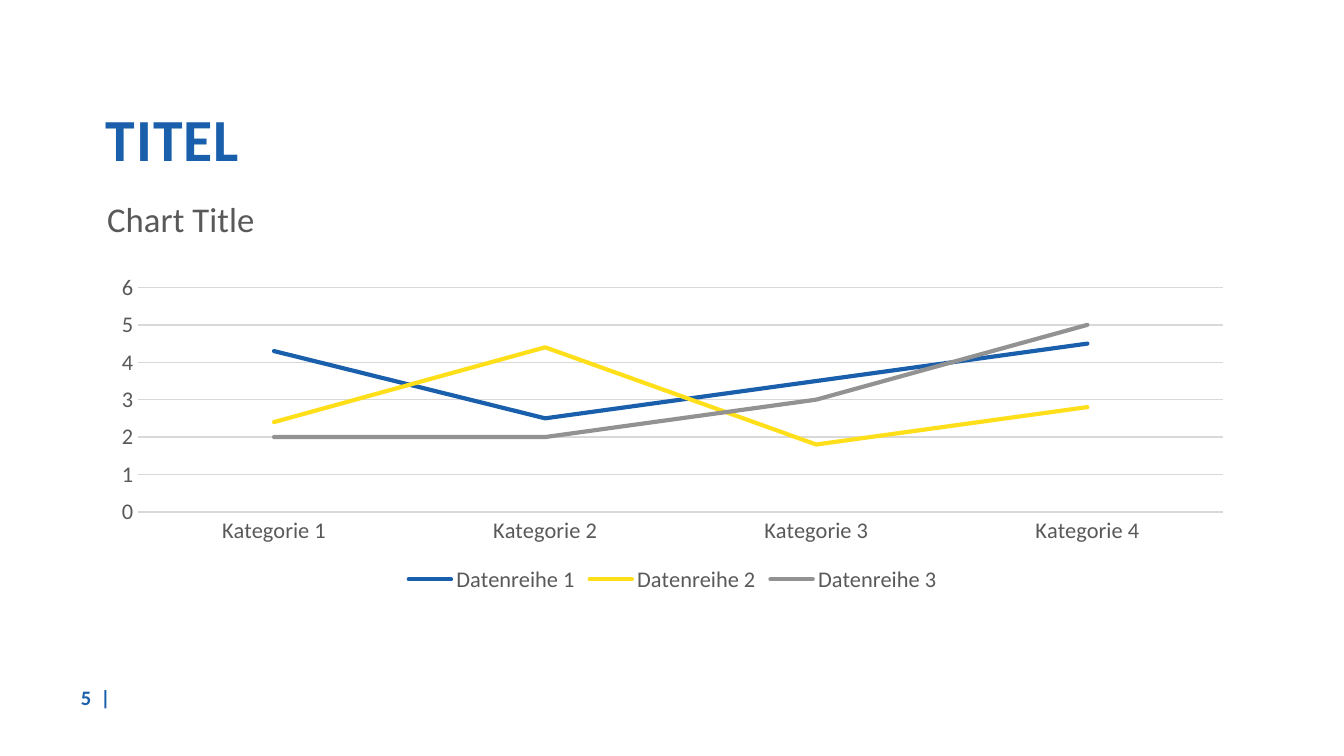
from lxml.etree import SubElement
from pptx import Presentation
from pptx.chart.data import CategoryChartData
from pptx.dml.color import RGBColor
from pptx.enum.chart import XL_CHART_TYPE, XL_LEGEND_POSITION, XL_MARKER_STYLE, XL_TICK_MARK
from pptx.enum.text import MSO_ANCHOR, PP_ALIGN
from pptx.oxml.ns import qn
from pptx.util import Inches, Pt

HUES = {"blue": "1A5FAB", "yellow": "FFDE1A", "gray": "929292", "text": "595959", "grid": "D9D9D9"}
CATS = [f"Kategorie {n}" for n in range(1, 5)]
ROWS = [("blue", (4.3, 2.5, 3.5, 4.5)), ("yellow", (2.4, 4.4, 1.8, 2.8)), ("gray", (2, 2, 3, 5))]


def style(item, values):
    """Set every attribute named in a dict of format values."""
    for name, value in values.items():
        setattr(item, name, value)


def tint(font, hue, size, bold=False):
    """Give a font its face, size, weight and colour."""
    style(font, {"name": "Calibri", "size": Pt(size), "bold": bold})
    font.color.rgb = RGBColor.from_string(HUES[hue])


def stroke(line, hue, width):
    """Give a line its colour and width."""
    line.color.rgb = RGBColor.from_string(HUES[hue])
    line.width = Pt(width)


def label(slide, box, text, size, frame, para):
    """Place a bold blue line of text in a box and return its run."""
    body = slide.shapes.add_textbox(*map(Inches, box)).text_frame
    style(body, {"word_wrap": True, **frame})
    line = body.paragraphs[0]
    style(line, para)
    run = line.add_run()
    run.text = text
    tint(run.font, "blue", size, True)
    return run


def layout(parent, index, modes, box, size):
    """Fix the place of a chart part, given in inches from the chart corner."""
    for old in parent.findall(qn("c:layout")):
        parent.remove(old)
    outer = parent.makeelement(qn("c:layout"), {})
    parent.insert(index, outer)
    manual = SubElement(outer, qn("c:manualLayout"))
    parts = {key: part / whole for key, part, whole in zip("xywh", box, size * 2)}
    for name, value in {**modes, **parts}.items():
        SubElement(manual, qn(f"c:{name}")).set("val", str(value))


def graph(slide, box):
    """Place the line chart with its title, axes and legend."""
    data = CategoryChartData()
    data.categories = CATS
    for n, (hue, values) in enumerate(ROWS, 1):
        data.add_series(f"Datenreihe {n}", values)
    chart = slide.shapes.add_chart(XL_CHART_TYPE.LINE, *map(Inches, box), data).chart
    tint(chart.font, "text", 12)
    chart.plots[0].vary_by_categories = False
    for series, (hue, values) in zip(chart.plots[0].series, ROWS):
        series.smooth = False
        series.marker.style = XL_MARKER_STYLE.NONE
        stroke(series.format.line, hue, 2.25)
    for line in chart.element.iter(qn("a:ln")):
        line.set("cap", "rnd")

    title = chart.chart_title
    title.text_frame.text = "Chart Title"
    tint(title.text_frame.paragraphs[0].runs[0].font, "text", 18.6)
    title.include_text_in_layout = False
    modes, size = {"xMode": "edge", "yMode": "edge"}, box[2:]
    layout(title.element, 1, modes, (0.01, 0.02), size)
    layout(chart.element.find(".//" + qn("c:plotArea")), 0,
           {"layoutTarget": "inner", **modes}, (0.29, 0.76, 8.07, 1.67), size)

    for axis in (chart.category_axis, chart.value_axis):
        style(axis, {"major_tick_mark": XL_TICK_MARK.NONE, "minor_tick_mark": XL_TICK_MARK.NONE})
        tint(axis.tick_labels.font, "text", 12)
    stroke(chart.category_axis.format.line, "grid", 0.75)
    style(chart.value_axis, {"minimum_scale": 0, "maximum_scale": 6, "major_unit": 1})
    chart.value_axis.format.line.fill.background()
    stroke(chart.value_axis.major_gridlines.format.line, "grid", 0.75)

    chart.has_legend = True
    style(chart.legend, {"position": XL_LEGEND_POSITION.BOTTOM, "include_in_layout": False})
    tint(chart.legend.font, "text", 12)


def main():
    """Build and save the slide."""
    deck = Presentation()
    style(deck, {"slide_width": Inches(10), "slide_height": Inches(10 * 9 / 16)})
    slide = deck.slides.add_slide(deck.slide_layouts[6])
    label(slide, (0.1, 5.04, 0.82, 0.3), "5  |", 11,
          {"vertical_anchor": MSO_ANCHOR.MIDDLE}, {"alignment": PP_ALIGN.RIGHT})
    head = label(slide, (0.69, 0.41, 8.62, 0.94), "TITEL", 32,
                 {"vertical_anchor": MSO_ANCHOR.BOTTOM}, {"line_spacing": 0.9})
    head.font._element.set("spc", "50")
    graph(slide, (0.74, 1.38, 8.53, 3.07))
    deck.save("out.pptx")


if __name__ == "__main__":
    main()
